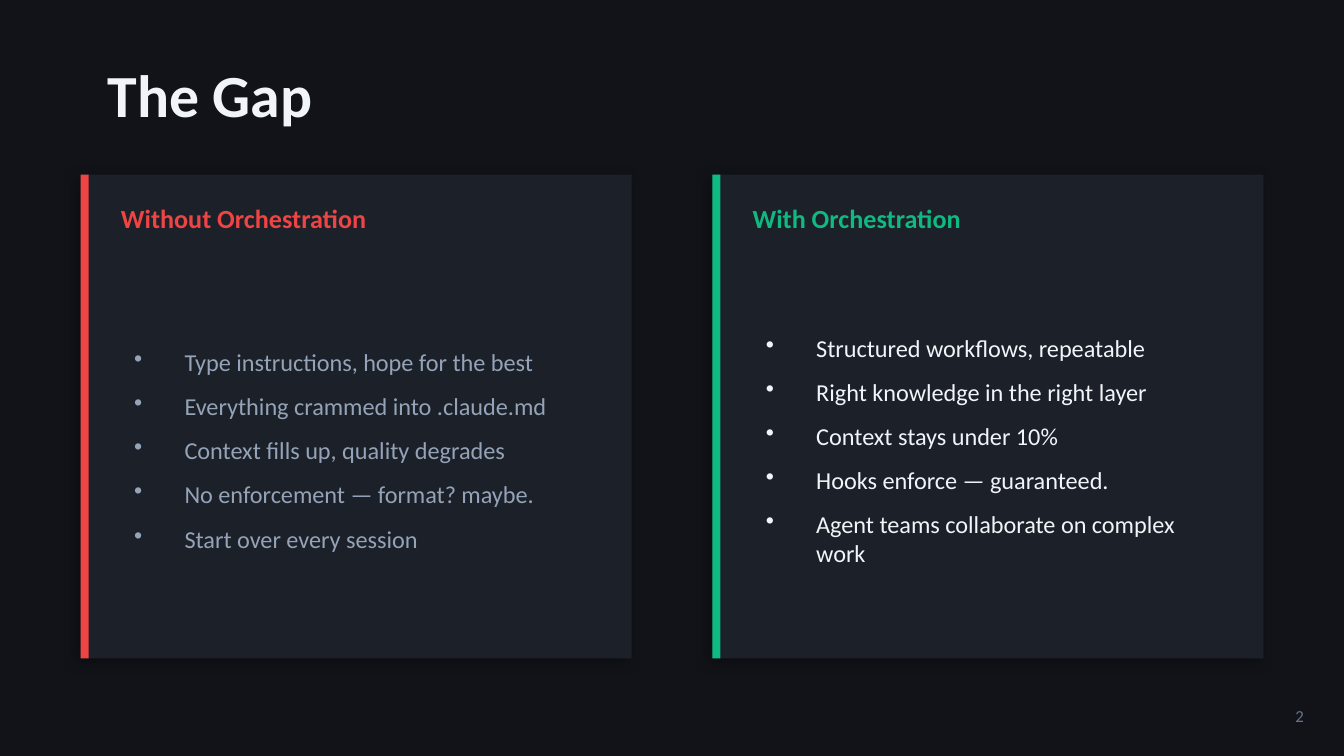
from dataclasses import dataclass

from lxml.etree import SubElement
from pptx import Presentation
from pptx.dml.color import RGBColor
from pptx.enum.shapes import MSO_SHAPE
from pptx.enum.text import MSO_ANCHOR, MSO_AUTO_SIZE, PP_ALIGN
from pptx.oxml.ns import qn
from pptx.shapes.autoshape import Shape
from pptx.slide import Slide
from pptx.text.text import TextFrame
from pptx.util import Inches, Pt

FONT = "Calibri"
BACKGROUND = "111318"
CARD_FILL = "1C2028"
LIGHT = "F1F5F9"
MUTED = "94A3B8"
FAINT = "64748B"
RED = "EF4444"
GREEN = "10B981"

CARD_LEFT, CARD_TOP = 0.6, 1.3
CARD_WIDTH, CARD_HEIGHT = 4.1, 3.6
CARD_PITCH = 4.7
ACCENT_WIDTH = 0.06
TEXT_INSET, TEXT_WIDTH = 0.3, 3.6
BULLET_INDENT = Pt(27)


@dataclass
class Card:
    heading: str
    accent: str
    text_color: str
    points: list[str]


CARDS = [
    Card("Without Orchestration", RED, MUTED, [
        "Type instructions, hope for the best",
        "Everything crammed into .claude.md",
        "Context fills up, quality degrades",
        "No enforcement — format? maybe.",
        "Start over every session",
    ]),
    Card("With Orchestration", GREEN, LIGHT, [
        "Structured workflows, repeatable",
        "Right knowledge in the right layer",
        "Context stays under 10%",
        "Hooks enforce — guaranteed.",
        "Agent teams collaborate on complex work",
    ]),
]


def rgb(color: str) -> RGBColor:
    return RGBColor.from_string(color)


def write_text(frame: TextFrame, lines: list[str], size: float, color: str,
               bold: bool = False, align: PP_ALIGN = PP_ALIGN.LEFT,
               padded: bool = False, bulleted: bool = False) -> None:
    frame.word_wrap = True
    frame.auto_size = MSO_AUTO_SIZE.NONE
    frame.vertical_anchor = MSO_ANCHOR.MIDDLE
    if not padded:
        frame.margin_left = frame.margin_right = 0
        frame.margin_top = frame.margin_bottom = 0
    for index, line in enumerate(lines):
        paragraph = frame.paragraphs[0] if index == 0 else frame.add_paragraph()
        paragraph.text = line
        paragraph.alignment = align
        if bulleted:
            paragraph.space_after = Pt(8)
            properties = paragraph._p.get_or_add_pPr()
            properties.set("marL", str(BULLET_INDENT))
            properties.set("indent", str(-BULLET_INDENT))
            SubElement(properties, qn("a:buSzPct"), val="100000")
            SubElement(properties, qn("a:buChar"), char="•")
        font = paragraph.font
        font.name, font.size, font.bold = FONT, Pt(size), bold
        font.color.rgb = rgb(color)


def add_text_frame(slide: Slide, left: float, top: float,
                   width: float, height: float) -> TextFrame:
    return slide.shapes.add_textbox(
        Inches(left), Inches(top), Inches(width), Inches(height)).text_frame


def add_panel(slide: Slide, left: float, width: float, color: str) -> Shape:
    """Add a flat rectangle of card height."""
    panel = slide.shapes.add_shape(
        MSO_SHAPE.RECTANGLE, Inches(left), Inches(CARD_TOP),
        Inches(width), Inches(CARD_HEIGHT))
    panel.fill.solid()
    panel.fill.fore_color.rgb = rgb(color)
    panel.line.fill.background()
    panel.shadow.inherit = False
    return panel


def add_soft_shadow(shape: Shape) -> None:
    effects = shape._element.spPr.find(qn("a:effectLst"))
    shadow = SubElement(effects, qn("a:outerShdw"), blurRad=str(Pt(8)),
                        dist=str(Pt(3)), dir=str(135 * 60000),
                        algn="bl", rotWithShape="0")
    color = SubElement(shadow, qn("a:srgbClr"), val="000000")
    SubElement(color, qn("a:alpha"), val="30000")


def add_card(slide: Slide, card: Card, left: float) -> None:
    add_soft_shadow(add_panel(slide, left, CARD_WIDTH, CARD_FILL))
    add_panel(slide, left, ACCENT_WIDTH, card.accent)
    text_left = left + TEXT_INSET
    heading = add_text_frame(slide, text_left, CARD_TOP + 0.15, TEXT_WIDTH, 0.35)
    write_text(heading, [card.heading], 14, card.accent, bold=True)
    points = add_text_frame(slide, text_left, CARD_TOP + 0.7, TEXT_WIDTH, 2.7)
    write_text(points, card.points, 13, card.text_color, padded=True, bulleted=True)


def main() -> None:
    presentation = Presentation()
    presentation.slide_width = Inches(10)
    presentation.slide_height = Inches(10 * 9 / 16)
    slide = presentation.slides.add_slide(presentation.slide_layouts[5])
    slide.background.fill.solid()
    slide.background.fill.fore_color.rgb = rgb(BACKGROUND)

    title = slide.shapes.title
    title.left, title.top = Inches(0.8), Inches(0.4)
    title.width, title.height = Inches(8), Inches(0.6)
    write_text(title.text_frame, ["The Gap"], 32, LIGHT, bold=True)

    for index, card in enumerate(CARDS):
        add_card(slide, card, CARD_LEFT + index * CARD_PITCH)

    page_number = add_text_frame(slide, 9.3, 5.15, 0.5, 0.35)
    write_text(page_number, ["2"], 9, FAINT, align=PP_ALIGN.RIGHT, padded=True)

    presentation.save("out.pptx")


if __name__ == "__main__":
    main()
